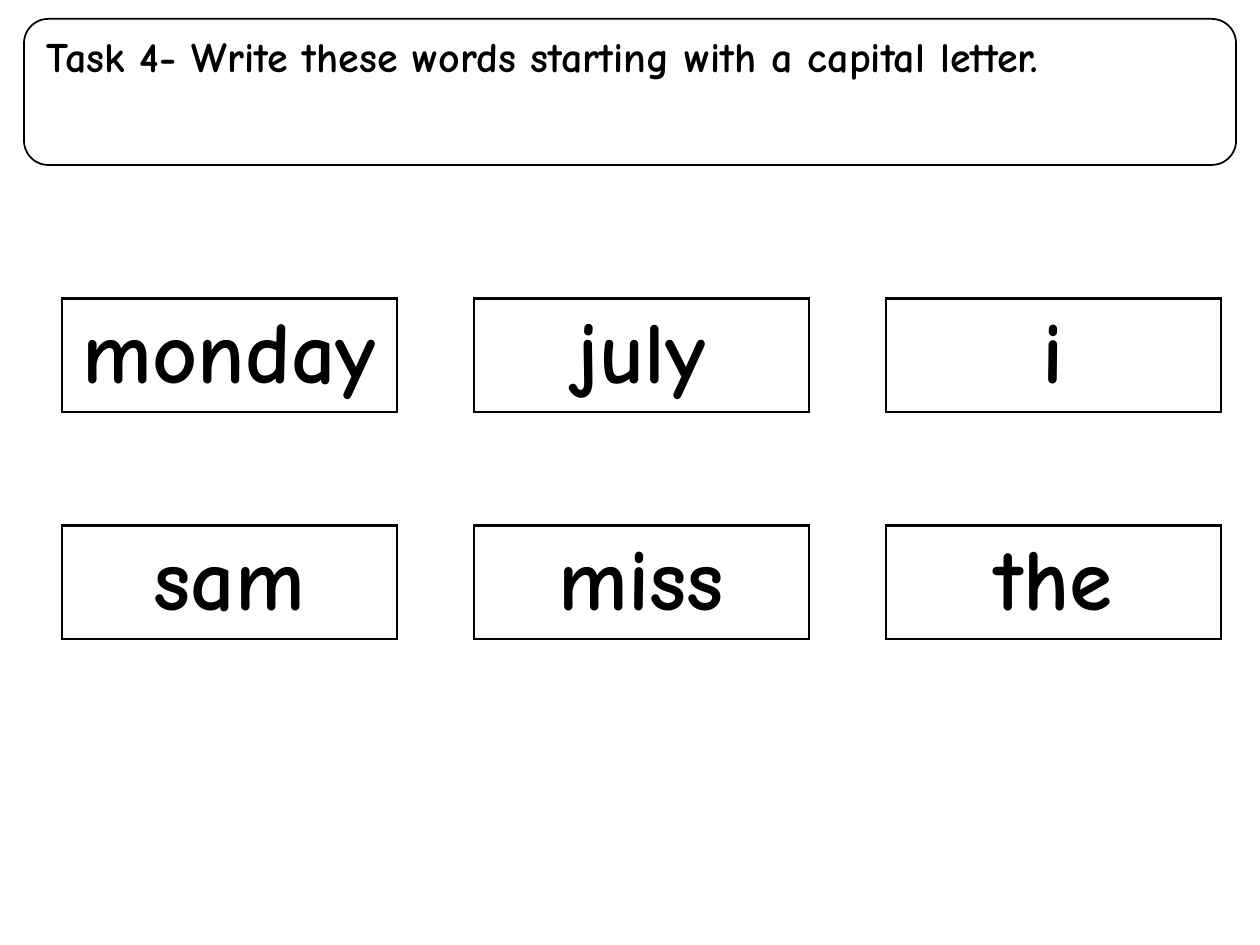
"""Build a worksheet slide with a task line and a grid of words to capitalise."""
from lxml import etree
from pptx import Presentation
from pptx import util as u
from pptx.dml.color import RGBColor
from pptx.enum import shapes, text
from pptx.oxml.ns import qn

BLACK = RGBColor(0x00, 0x00, 0x00)
WHITE = RGBColor(0xFF, 0xFF, 0xFF)
FONT = "Comic Neue"
PLAIN_STYLE = "{2D5ABB26-0587-4C30-8999-92F81FD0307C}"
TASK = "Task 4- Write these words starting with a capital letter."
WORDS = [["monday", "july", "i"], ["sam", "miss", "the"]]
WORD_WIDTH, GAP_WIDTH, ROW_HEIGHT = 2.66, 0.61, 0.9


def add_span(para, words, size, align):
    """Add one bold black run to an aligned paragraph."""
    para.alignment = align
    span = para.add_run()
    span.text = words
    span.font.name = FONT
    span.font.size = u.Pt(size)
    span.font.bold = True
    span.font.color.rgb = BLACK


def add_frame(page):
    """Draw the rounded outline around the task."""
    frame = page.shapes.add_shape(
        shapes.MSO_SHAPE.ROUNDED_RECTANGLE,
        u.Inches(0.19), u.Inches(0.15), u.Inches(9.62), u.Inches(1.16))
    frame.shadow.inherit = False
    frame.fill.background()
    frame.line.color.rgb = BLACK
    frame.line.width = u.Pt(1)


def fill_title(page):
    """Place the task in the title placeholder."""
    title = page.shapes.title
    title.left, title.top = u.Inches(0.27), u.Inches(0.19)
    title.width, title.height = u.Inches(9.54), u.Inches(1.31)
    box = title.text_frame
    box.word_wrap = True
    box.auto_size = text.MSO_AUTO_SIZE.NONE
    box.vertical_anchor = text.MSO_ANCHOR.TOP
    add_span(box.paragraphs[0], TASK, 24, text.PP_ALIGN.JUSTIFY)


def add_borders(cell, sides):
    """Rule the given sides of a cell."""
    properties = cell._tc.get_or_add_tcPr()
    for position, side in enumerate(sides):
        line = etree.Element(qn(f"a:ln{side}"), w=str(u.Pt(1.5)))
        fill = etree.SubElement(line, qn("a:solidFill"))
        etree.SubElement(fill, qn("a:srgbClr"), val=str(BLACK))
        properties.insert(position, line)


def add_word(cell, word):
    """Write one centred word in a white cell."""
    cell.fill.solid()
    cell.fill.fore_color.rgb = WHITE
    cell.vertical_anchor = text.MSO_ANCHOR.MIDDLE
    cell.margin_left = cell.margin_right = u.Inches(0.09)
    add_span(cell.text_frame.paragraphs[0], word, 50, text.PP_ALIGN.CENTER)


def add_word_grid(page):
    """Add the table whose odd rows and columns are gaps between words."""
    rows, columns = 2 * len(WORDS) - 1, 2 * len(WORDS[0]) - 1
    widths = [GAP_WIDTH if c % 2 else WORD_WIDTH for c in range(columns)]
    holder = page.shapes.add_table(
        rows, columns, u.Inches(0.49), u.Inches(2.37),
        u.Inches(sum(widths)), u.Inches(rows * ROW_HEIGHT))
    grid = holder.table
    grid.first_row = grid.horz_banding = False
    grid._tbl.tblPr.find(qn("a:tableStyleId")).text = PLAIN_STYLE
    for column, width in zip(grid.columns, widths):
        column.width = u.Inches(width)
    for r in range(rows):
        for c in range(columns):
            cell = grid.cell(r, c)
            if r % 2 or c % 2:
                cell.fill.background()
            else:
                add_word(cell, WORDS[r // 2][c // 2])
            add_borders(cell, ("" if r % 2 else "LR") + ("" if c % 2 else "TB"))


def main():
    """Build and save the slide."""
    deck = Presentation()
    deck.slide_width, deck.slide_height = u.Inches(10), u.Inches(7.5)
    page = deck.slides.add_slide(deck.slide_layouts.get_by_name("Title Only"))
    add_word_grid(page)
    add_frame(page)
    fill_title(page)
    deck.save("out.pptx")


if __name__ == "__main__":
    main()
